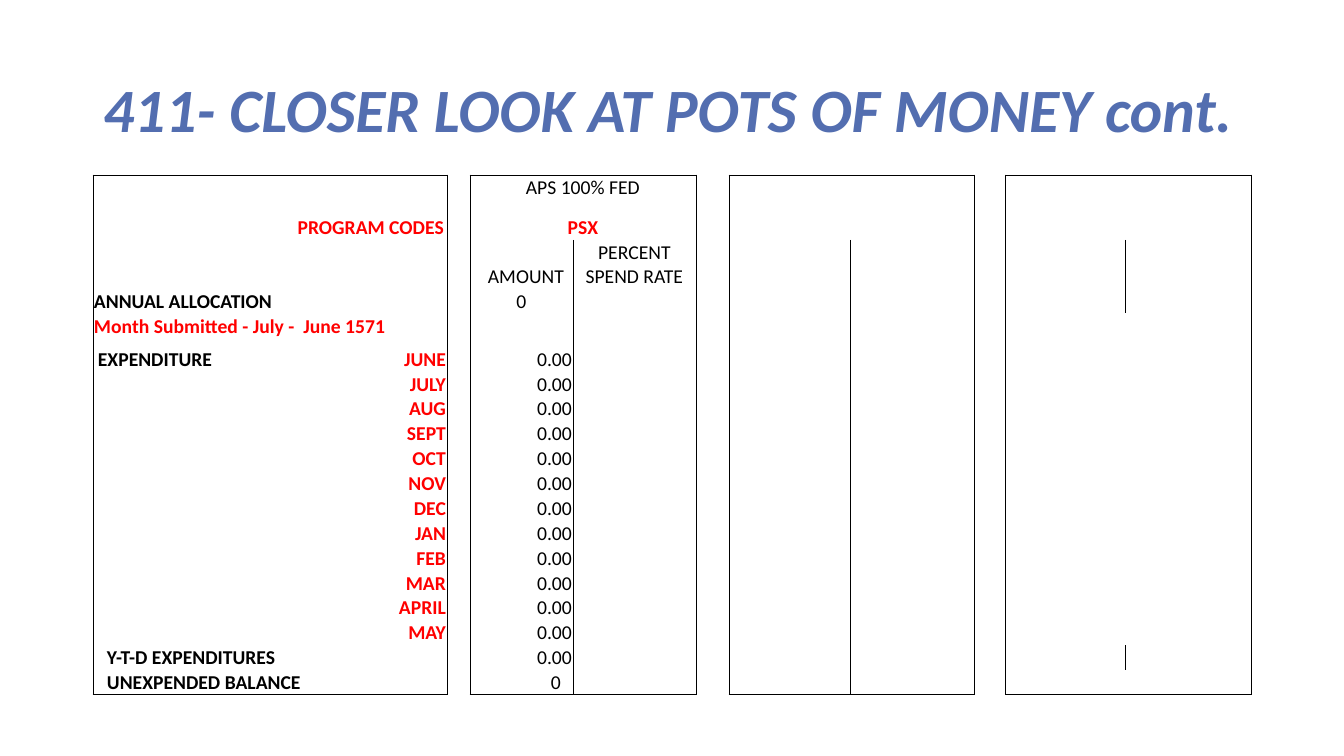
from dataclasses import dataclass

from lxml import etree
from pptx import Presentation
from pptx import util as u
from pptx.dml.color import RGBColor
from pptx.enum import text
from pptx.oxml import ns

PX = 914400 / 100.8
LEFT, CENTER, RIGHT = text.PP_ALIGN.LEFT, text.PP_ALIGN.CENTER, text.PP_ALIGN.RIGHT


@dataclass(frozen=True)
class Theme:
    font: str = "Calibri"
    title: str = "536EB0"
    ink: str = "000000"
    accent: str = "FF0000"
    title_size: int = 44
    body_size: int = 14
    border_pt: float = 0.5


THEME = Theme()
NO_GRID_STYLE = "{2D5ABB26-0587-4C30-8999-92F81FD0307C}"
COLUMNS = [249, 105, 23, 103, 123, 33, 121, 125, 31, 120, 126]
ROWS = [23, 40, 42, 23, 21, 33] + [23] * 11 + [23, 21, 21]
PANEL_STARTS = [0, 3, 6, 9]  # every panel is two columns wide
MONTHS = ["JUNE", "JULY", "AUG", "SEPT", "OCT", "NOV",
          "DEC", "JAN", "FEB", "MAR", "APRIL", "MAY"]
FIRST_MONTH = 5
YTD = FIRST_MONTH + len(MONTHS)
BALANCE = YTD + 1
ROWS = ROWS[:BALANCE] + [21]


def px(length):
    return u.Emu(round(length * PX))


def style(font, **values):
    values = {"name": THEME.font, **values}
    font.color.rgb = RGBColor.from_string(values.pop("color"))
    for name, value in values.items():
        setattr(font, name, value)


def write(cell, runs, align=LEFT, left=1, right=1):
    """Fill a cell with (wording, colour, bold) runs."""
    cell.margin_left, cell.margin_right = px(left), px(right)
    paragraph = cell.text_frame.paragraphs[0]
    paragraph.alignment = align
    for wording, color, bold in runs:
        run = paragraph.add_run()
        run.text = wording
        style(run.font, color=color, bold=bold, size=u.Pt(THEME.body_size))
    return paragraph


def add_right_tab(paragraph, position):
    tabs = etree.SubElement(paragraph._p.get_or_add_pPr(), ns.qn("a:tabLst"))
    etree.SubElement(tabs, ns.qn("a:tab"), pos=str(px(position)), algn="r")


def draw_borders(cell, sides):
    properties = cell._tc.get_or_add_tcPr()
    for index, side in enumerate(s for s in "LRTB" if s in sides):
        line = etree.Element(ns.qn(f"a:ln{side}"), w=str(u.Pt(THEME.border_pt)))
        fill = etree.SubElement(line, ns.qn("a:solidFill"))
        etree.SubElement(fill, ns.qn("a:srgbClr"), val=THEME.ink)
        properties.insert(index, line)


def reset_cells(table):
    for cell in table.iter_cells():
        cell.fill.background()
        cell.vertical_anchor = text.MSO_ANCHOR.BOTTOM
        for side, margin in {"left": 1, "right": 1, "top": 1, "bottom": 0}.items():
            setattr(cell, f"margin_{side}", px(margin))
        end = cell.text_frame.paragraphs[0]._p.get_or_add_endParaRPr()
        end.set("sz", str(THEME.body_size * 100))


def frame_panels(table):
    """Merge the wide cells and outline each two-column panel."""
    wide_labels = {1, 4, BALANCE, *range(FIRST_MONTH, YTD)}
    for start in PANEL_STARTS:
        for row in range(len(ROWS)):
            first, last = table.cell(row, start), table.cell(row, start + 1)
            wide = row in wide_labels if start == 0 else row < 2
            if wide:
                first.merge(last)
            ends = ("T" if row == 0 else "") + ("B" if row == BALANCE else "")
            draw_borders(first, "L" + ends + ("R" if wide else ""))
            draw_borders(last, "R" + ends)


def fill_labels(table):
    ink, accent = THEME.ink, THEME.accent
    write(table.cell(1, 0), [("PROGRAM CODES", accent, True)], RIGHT, right=3)
    write(table.cell(3, 0), [("ANNUAL ALLOCATION", ink, True)])
    write(table.cell(4, 0), [("Month Submitted - July -  June 1571", accent, True)])
    expenditure = write(table.cell(FIRST_MONTH, 0), [
        ("EXPENDITURE\t", ink, True), (MONTHS[0], accent, True)], left=5)
    add_right_tab(expenditure, 348)
    for row, month in enumerate(MONTHS[1:], FIRST_MONTH + 1):
        write(table.cell(row, 0), [(month, accent, True)], RIGHT)
    write(table.cell(YTD, 0), [("Y-T-D EXPENDITURES", ink, True)], left=14)
    write(table.cell(BALANCE, 0), [("UNEXPENDED BALANCE", ink, True)], left=14)


def fill_amounts(table):
    ink = THEME.ink
    write(table.cell(0, 3), [("APS 100% FED", ink, False)], CENTER)
    write(table.cell(1, 3), [("PSX", THEME.accent, True)], CENTER)
    write(table.cell(2, 3), [("AMOUNT", ink, False)], left=18)
    write(table.cell(2, 4), [("PERCENT SPEND RATE", ink, False)], CENTER)
    write(table.cell(3, 3), [("0", ink, False)], CENTER)
    for row in range(FIRST_MONTH, BALANCE):
        write(table.cell(row, 3), [("0.00", ink, False)], RIGHT)
    write(table.cell(BALANCE, 3), [("0", ink, False)], CENTER, left=70)


def add_budget_table(slide, left, top):
    frame = slide.shapes.add_table(len(ROWS), len(COLUMNS), px(left), px(top),
                                   px(sum(COLUMNS)), px(sum(ROWS)))
    table = frame.table
    table.first_row = table.horz_banding = False
    table._tbl.tblPr.find(ns.qn("a:tableStyleId")).text = NO_GRID_STYLE
    for column, width in zip(table.columns, COLUMNS):
        column.width = px(width)
    for row, height in zip(table.rows, ROWS):
        row.height = px(height)
    reset_cells(table)
    frame_panels(table)
    fill_labels(table)
    fill_amounts(table)


def set_title(slide, wording, left, top, width, height):
    title = slide.shapes.title
    title.left, title.top, title.width, title.height = map(
        px, (left, top, width, height))
    frame = title.text_frame
    frame.text = wording
    frame.word_wrap = True
    frame.auto_size = text.MSO_AUTO_SIZE.NONE
    frame.vertical_anchor = text.MSO_ANCHOR.MIDDLE
    paragraph = frame.paragraphs[0]
    paragraph.alignment = LEFT
    paragraph.line_spacing = 0.9
    style(paragraph.runs[0].font, color=THEME.title, bold=True, italic=True,
          size=u.Pt(THEME.title_size))


def main():
    deck = Presentation()
    deck.slide_width, deck.slide_height = px(1344), px(756)
    slide = deck.slides.add_slide(deck.slide_layouts[5])
    set_title(slide, "411- CLOSER LOOK AT POTS OF MONEY cont.", 93, 40, 1159, 146)
    add_budget_table(slide, 93, 175)
    deck.save("out.pptx")


if __name__ == "__main__":
    main()
